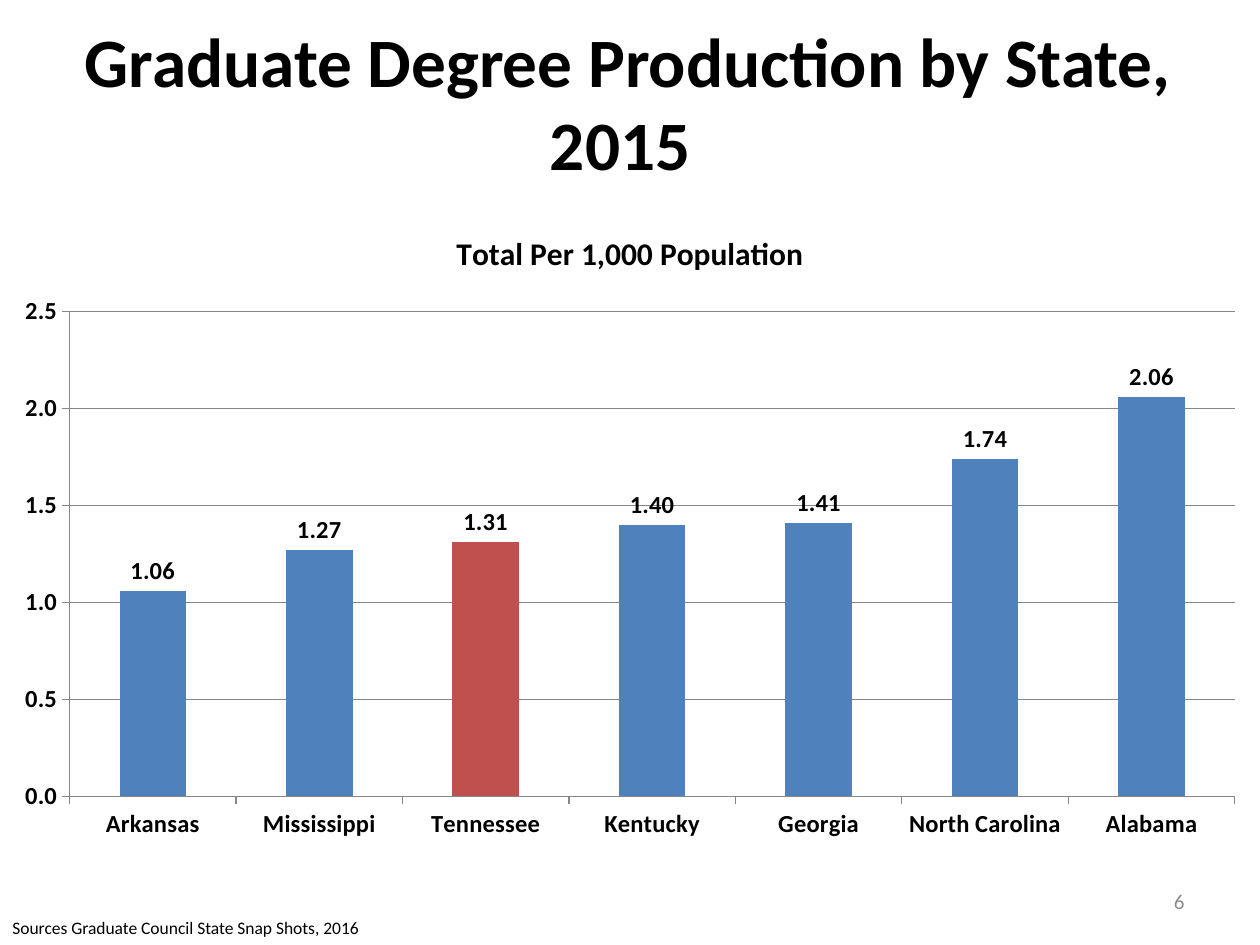
"""Build a slide with a column chart of graduate degrees per state."""
from pptx import Presentation
from pptx.chart.data import CategoryChartData
from pptx.dml.color import RGBColor
from pptx.enum.chart import XL_CHART_TYPE, XL_LABEL_POSITION, XL_TICK_MARK
from pptx.enum.text import MSO_ANCHOR, MSO_AUTO_SIZE, PP_ALIGN
from pptx.util import Inches, Pt

BLACK, GRAY, BLUE, RED, LINE = "000000", "8C8C8C", "4F81BD", "C0504D", "878787"
RATES = {
    "Arkansas": 1.06,
    "Mississippi": 1.27,
    "Tennessee": 1.31,
    "Kentucky": 1.40,
    "Georgia": 1.41,
    "North Carolina": 1.74,
    "Alabama": 2.06,
}


def color(code):
    return RGBColor.from_string(code)


def style(font, size, bold=False, ink=BLACK):
    font.name, font.size, font.bold = "Calibri", Pt(size), bold
    font.color.rgb = color(ink)


def write(frame, text, size, bold=False, ink=BLACK, align=PP_ALIGN.LEFT,
          anchor=MSO_ANCHOR.TOP, wrap=True):
    frame.auto_size, frame.word_wrap = MSO_AUTO_SIZE.NONE, wrap
    frame.vertical_anchor = anchor
    line = frame.paragraphs[0]
    line.alignment = align
    run = line.add_run()
    run.text = text
    style(run.font, size, bold, ink)


class Deck:
    """Hold the style and the current slide, with lengths in percent of its size."""

    def __init__(self):
        self.show = Presentation()
        self.show.slide_width, self.show.slide_height = Inches(10), Inches(7.5)
        self.slide = self.show.slides.add_slide(self.show.slide_layouts[5])

    def area(self, left, top, width, height):
        wide, high = self.show.slide_width, self.show.slide_height
        return [int(part * full / 100) for part, full in
                zip((left, top, width, height), (wide, high, wide, high))]

    def title(self, text, *box):
        shape = self.slide.shapes.title
        shape.left, shape.top, shape.width, shape.height = self.area(*box)
        write(shape.text_frame, text, 39.6, bold=True,
              align=PP_ALIGN.CENTER, anchor=MSO_ANCHOR.MIDDLE)

    def label(self, text, *box, **form):
        shape = self.slide.shapes.add_textbox(*self.area(*box))
        write(shape.text_frame, text, **form)

    def axis(self, axis):
        axis.major_tick_mark = XL_TICK_MARK.OUTSIDE
        axis.minor_tick_mark = XL_TICK_MARK.NONE
        axis.format.line.color.rgb = color(LINE)
        style(axis.tick_labels.font, 14, bold=True)

    def columns(self, name, rates, accent, *box):
        data = CategoryChartData()
        data.categories = list(rates)
        data.add_series(name, list(rates.values()))
        chart = self.slide.shapes.add_chart(
            XL_CHART_TYPE.COLUMN_CLUSTERED, *self.area(*box), data).chart
        style(chart.font, 10)
        chart.has_legend = False
        write_head = chart.chart_title.text_frame.paragraphs[0].add_run()
        write_head.text = name
        style(write_head.font, 18, bold=True)

        scale = chart.value_axis
        self.axis(chart.category_axis)
        self.axis(scale)
        scale.minimum_scale, scale.maximum_scale, scale.major_unit = 0, 2.5, 0.5
        scale.tick_labels.number_format = "0.0"
        scale.tick_labels.number_format_is_linked = False
        scale.major_gridlines.format.line.color.rgb = color(LINE)

        plot = chart.plots[0]
        plot.gap_width, plot.vary_by_categories = 150, False
        bars = plot.series[0]
        point = bars.points[list(rates).index(accent)]
        for part, code in ((bars, BLUE), (point, RED)):
            part.format.fill.solid()
            part.format.fill.fore_color.rgb = color(code)
        marks = bars.data_labels
        marks.show_value = True
        marks.position = XL_LABEL_POSITION.OUTSIDE_END
        marks.number_format, marks.number_format_is_linked = "0.00", False
        style(marks.font, 14, bold=True)


def main():
    deck = Deck()
    deck.title("Graduate Degree Production by State, 2015 ", 1.6, 2.4, 96.5, 16.67)
    deck.columns("Total Per 1,000 Population", RATES, "Tennessee", 0, 21.87, 100, 68.27)
    deck.label("Sources Graduate Council State Snap Shots, 2016",
               0, 96.4, 30.3, 3.6, size=10, wrap=False)
    deck.label("6", 71.7, 92.67, 23.3, 5.33, size=12, ink=GRAY,
               align=PP_ALIGN.RIGHT, anchor=MSO_ANCHOR.MIDDLE)
    deck.show.save("out.pptx")


if __name__ == "__main__":
    main()
